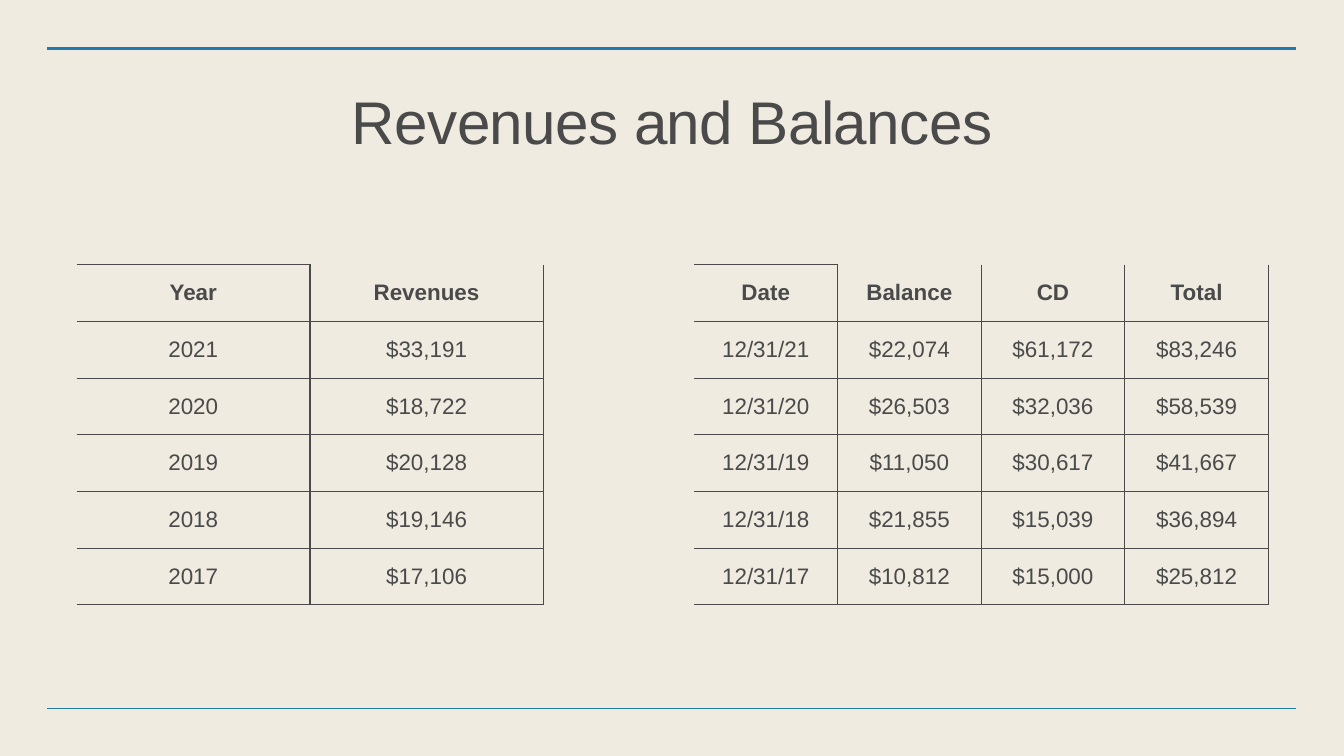
from dataclasses import dataclass

from lxml.etree import SubElement
from pptx import Presentation
from pptx.dml.color import RGBColor
from pptx.enum.shapes import MSO_CONNECTOR as Connector
from pptx.enum.text import MSO_ANCHOR as Anchor, PP_ALIGN as Align
from pptx.oxml.ns import qn
from pptx.util import Inches, Pt

FONT = "Arial"
BACKGROUND, RULE_BLUE = "F0EBE0", "227AAF"
TITLE_GREY, TABLE_GREY = "4A4A4A", "4A4A4B"
NO_STYLE_NO_GRID = "{2D5ABB26-0587-4C30-8999-92F81FD0307C}"
INSET = Inches(0.06)
TABLE_TOP, ROW_HEIGHT = 5.25, 1.125


@dataclass
class Rule:
    y: float
    weight: float


@dataclass
class Ledger:
    left: float
    column_width: float
    first_divider: float
    rows: list[tuple[str, ...]]


RULES = [Rule(0.97, 4), Rule(14.06, 1)]

LEDGERS = [
    Ledger(1.52, 4.63, 2, [
        ("Year", "Revenues"),
        ("2021", "$33,191"),
        ("2020", "$18,722"),
        ("2019", "$20,128"),
        ("2018", "$19,146"),
        ("2017", "$17,106"),
    ]),
    Ledger(13.77, 2.85, 1, [
        ("Date", "Balance", "CD", "Total"),
        ("12/31/21", "$22,074", "$61,172", "$83,246"),
        ("12/31/20", "$26,503", "$32,036", "$58,539"),
        ("12/31/19", "$11,050", "$30,617", "$41,667"),
        ("12/31/18", "$21,855", "$15,039", "$36,894"),
        ("12/31/17", "$10,812", "$15,000", "$25,812"),
    ]),
]


def color(value: str) -> RGBColor:
    return RGBColor.from_string(value)


def add_run(paragraph, text: str, size: float, tint: str, bold: bool = False):
    paragraph.alignment = Align.CENTER
    run = paragraph.add_run()
    run.text = text
    run.font.name = FONT
    run.font.size = Pt(size)
    run.font.bold = bold
    run.font.color.rgb = color(tint)
    return run


def add_rule(slide, rule: Rule) -> None:
    line = slide.shapes.add_connector(
        Connector.STRAIGHT, Inches(0.94), Inches(rule.y), Inches(25.72), Inches(rule.y))
    line.line.color.rgb = color(RULE_BLUE)
    line.line.width = Pt(rule.weight)
    SubElement(line._element.spPr, qn("a:effectLst"))


def add_title(slide, text: str) -> None:
    title = slide.shapes.add_textbox(Inches(1.89), Inches(1.9), Inches(22.89), Inches(3.53))
    frame = title.text_frame
    frame.word_wrap = True
    frame.margin_left = frame.margin_right = frame.margin_top = frame.margin_bottom = INSET
    paragraph = frame.paragraphs[0]
    paragraph.line_spacing = 0.8
    run = add_run(paragraph, text, 86, TITLE_GREY)
    run.font._element.set("spc", "-90")


def add_border(cell, side: str, weight: float) -> None:
    border = SubElement(cell._tc.get_or_add_tcPr(), qn(f"a:ln{side}"), w=str(Pt(weight)))
    fill = SubElement(border, qn("a:solidFill"))
    SubElement(fill, qn("a:srgbClr"), val=TABLE_GREY)


def add_ledger(slide, ledger: Ledger) -> None:
    row_count, column_count = len(ledger.rows), len(ledger.rows[0])
    table = slide.shapes.add_table(
        row_count, column_count, Inches(ledger.left), Inches(TABLE_TOP),
        Inches(ledger.column_width * column_count), Inches(ROW_HEIGHT * row_count)).table
    table.horz_banding = False
    table._tbl.tblPr.find(qn("a:tableStyleId")).text = NO_STYLE_NO_GRID

    for column in table.columns:
        column.width = Inches(ledger.column_width)
    for r, values in enumerate(ledger.rows):
        table.rows[r].height = Inches(ROW_HEIGHT)
        for c, value in enumerate(values):
            cell = table.cell(r, c)
            cell.vertical_anchor = Anchor.MIDDLE
            cell.margin_left = cell.margin_right = INSET
            cell.margin_top = cell.margin_bottom = INSET

            # The grid is open on the left; only the first heading has a top line
            add_border(cell, "R", ledger.first_divider if c == 0 else 1)
            if r == c == 0:
                add_border(cell, "T", 1)
            add_border(cell, "B", 1)
            cell.fill.background()

            paragraph = cell.text_frame.paragraphs[0]
            paragraph.space_before = Pt(10)
            add_run(paragraph, value, 32, TABLE_GREY, bold=r == 0)


def main() -> None:
    deck = Presentation()
    deck.slide_width, deck.slide_height = Inches(26.67), Inches(15)
    slide = deck.slides.add_slide(deck.slide_layouts[6])
    slide.background.fill.solid()
    slide.background.fill.fore_color.rgb = color(BACKGROUND)

    # Rules above and below the content
    for rule in RULES:
        add_rule(slide, rule)

    # Title and the two tables
    add_title(slide, "Revenues and Balances")
    for ledger in LEDGERS:
        add_ledger(slide, ledger)

    deck.save("out.pptx")


if __name__ == "__main__":
    main()
